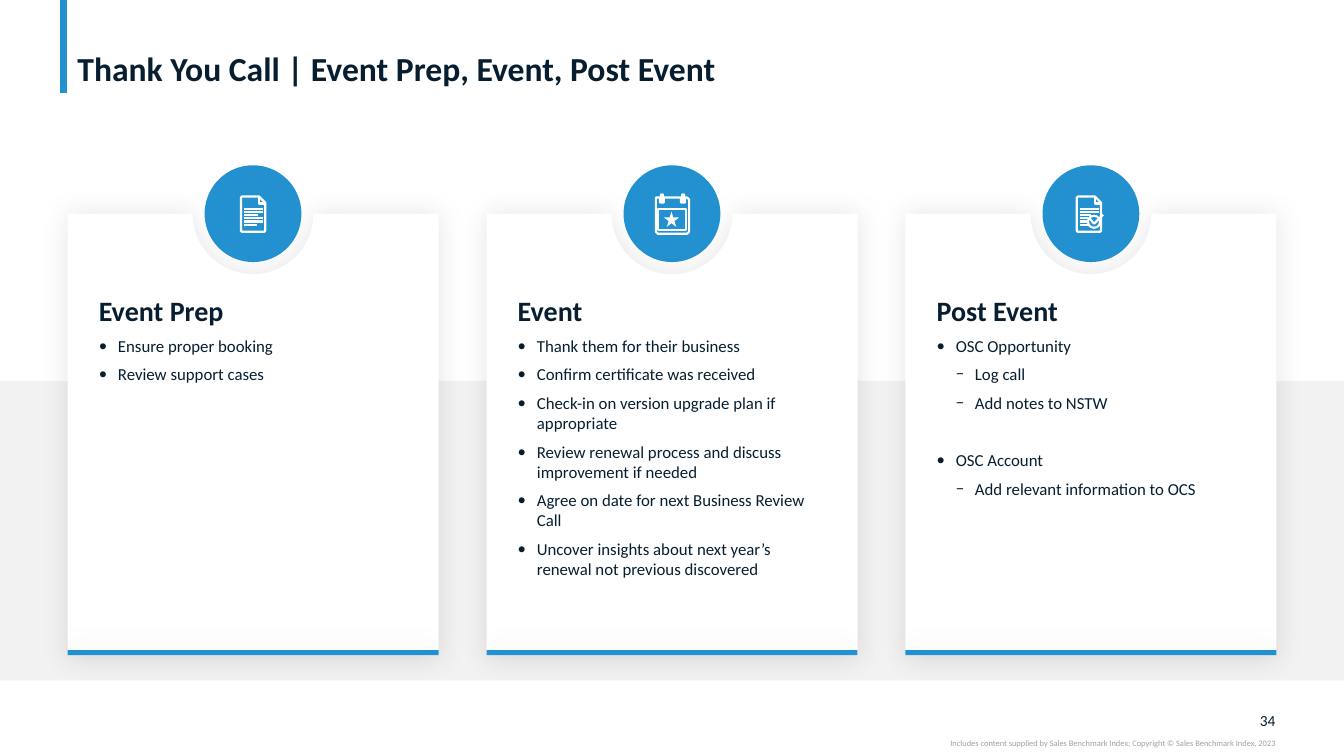
from math import cos, pi, sin

from lxml.etree import SubElement
from pptx import Presentation
from pptx.dml.color import RGBColor
from pptx.enum.shapes import MSO_CONNECTOR as CONNECTOR, MSO_SHAPE as SHAPE
from pptx.enum.text import MSO_ANCHOR as ANCHOR, PP_ALIGN as ALIGN
from pptx.oxml.ns import qn
from pptx.util import Inches, Pt

BLUE, NAVY, WHITE, GRAY, PALE = "2391CF", "071E31", "FFFFFF", "A0A0A0", "F2F2F2"
CARD_LEFT, CARD_TOP, CARD_WIDTH, CARD_HEIGHT = 0.67, 2.12, 3.68, 4.38
CARD_STEP = (8.98 - CARD_LEFT) / 2
NOTCH_RADIUS, DISC_RADIUS = 0.6, 0.48
INDENT = 0.19


def color(value):
    return RGBColor.from_string(value)


def style(shape, fill=None, line=None, weight=1.5, shadow=False):
    shape.shadow.inherit = False
    if fill:
        shape.fill.solid()
        shape.fill.fore_color.rgb = color(fill)
    else:
        shape.fill.background()
    if line:
        shape.line.color.rgb = color(line)
        shape.line.width = Pt(weight)
    else:
        shape.line.fill.background()
    if shadow:
        effects = shape._element.spPr.find(qn("a:effectLst"))
        outer = SubElement(effects, qn("a:outerShdw"), blurRad=str(Pt(20)), algn="ctr", rotWithShape="0")
        black = SubElement(outer, qn("a:srgbClr"), val="000000")
        SubElement(black, qn("a:alpha"), val="10000")
    return shape


def add_preset(shapes, kind, left, top, width, height, **formats):
    shape = shapes.add_shape(kind, Inches(left), Inches(top), Inches(width), Inches(height))
    return style(shape, **formats)


def add_outline(shapes, points, closed=True, **formats):
    start, *rest = [(Inches(x), Inches(y)) for x, y in points]
    builder = shapes.build_freeform(*start)
    builder.add_line_segments(rest, close=closed)
    return style(builder.convert_to_shape(), **formats)


def add_line(shapes, start, end, line, weight):
    connector = shapes.add_connector(CONNECTOR.STRAIGHT, *[Inches(value) for value in (*start, *end)])
    connector.line.color.rgb = color(line)
    connector.line.width = Pt(weight)
    SubElement(connector._element.spPr, qn("a:effectLst"))


def write(paragraph, text, size=12, fill=NAVY, bold=False, align=ALIGN.LEFT,
          before=None, after=None, spacing=None, bullet=None, level=0):
    paragraph.alignment = align
    if before:
        paragraph.space_before = Pt(before)
    if after:
        paragraph.space_after = Pt(after)
    if spacing:
        paragraph.line_spacing = spacing
    if bullet:
        paragraph.level = level
        properties = paragraph._p.get_or_add_pPr()
        properties.set("marL", str(Inches(INDENT * (level + 1))))
        properties.set("indent", str(Inches(-INDENT)))
        SubElement(properties, qn("a:buFont"), typeface="Calibri")
        SubElement(properties, qn("a:buChar"), char=bullet)
    run = paragraph.add_run()
    run.text = text
    run.font.name = "Calibri"
    run.font.size = Pt(size)
    run.font.bold = bold
    run.font.color.rgb = color(fill)


def set_frame(frame, anchor, left, top, right, bottom):
    frame.word_wrap = True
    frame.vertical_anchor = anchor
    frame.margin_left, frame.margin_top = Inches(left), Inches(top)
    frame.margin_right, frame.margin_bottom = Inches(right), Inches(bottom)
    return frame.paragraphs[0]


def add_label(slide, box, text, anchor=ANCHOR.TOP, side=0, **formats):
    label = slide.shapes.add_textbox(*[Inches(value) for value in box])
    write(set_frame(label.text_frame, anchor, side, 0, side, 0), text, **formats)


def draw_page(shapes, x, y, rows):
    pen = {"line": WHITE, "weight": 1.6}
    add_outline(shapes, [(x + 0.06, y - 0.17), (x + 0.06, y - 0.1), (x + 0.125, y - 0.1)], closed=False, **pen)
    sheet = [(0.06, -0.17), (-0.11, -0.17), (-0.12, -0.16), (-0.12, 0.17), (-0.11, 0.18),
             (0.11, 0.18), (0.12, 0.17), (0.12, -0.11)]
    add_outline(shapes, [(x + dx, y + dy) for dx, dy in sheet], **pen)
    for index, length in enumerate(rows):
        row = y - 0.05 + 0.16 / 5 * index
        add_line(shapes, (x - 0.09, row), (x - 0.09 + length, row), **pen)


def draw_prep_icon(shapes, x, y):
    draw_page(shapes, x, y, [0.19, 0.19, 0.14, 0.19, 0.19, 0.13])


def draw_event_icon(shapes, x, y):
    pen = {"line": WHITE, "weight": 1.5}
    for dx in (-0.11, 0.1):
        add_preset(shapes, SHAPE.ROUNDED_RECTANGLE, x + dx, y - 0.19, 0.02, 0.07, **pen)
    body = [(-0.16, -0.16), (-0.12, -0.16), (-0.12, -0.11), (-0.08, -0.11), (-0.08, -0.16),
            (0.09, -0.16), (0.09, -0.11), (0.13, -0.11), (0.13, -0.16), (0.15, -0.16),
            (0.17, -0.14), (0.17, 0.18), (0.15, 0.2), (-0.14, 0.2), (-0.16, 0.18), (-0.16, -0.14)]
    add_outline(shapes, [(x + dx, y + dy) for dx, dy in body], **pen)
    add_preset(shapes, SHAPE.RECTANGLE, x - 0.14, y - 0.05, 0.28, 0.21, **pen)
    add_preset(shapes, SHAPE.STAR_5_POINT, x - 0.08, y - 0.02, 0.15, 0.15, fill=WHITE)


def draw_post_icon(shapes, x, y):
    draw_page(shapes, x - 0.02, y, [0.19, 0.19, 0.11, 0.08, 0.07, 0.08])
    add_preset(shapes, SHAPE.OVAL, x - 0.03, y + 0.02, 0.12, 0.12, line=WHITE, weight=1.5)
    for dx, dy in ((-0.01, 0.05), (0.12, 0.01)):
        add_line(shapes, (x + dx, y + dy), (x + 0.03, y + 0.1), WHITE, 1.6)


def add_card(slide, left, top, width, height, heading, items, draw_icon):
    center, right, bottom = left + width / 2, left + width, top + height
    angles = [pi - pi * step / 48 for step in range(49)]
    notch = [(center + NOTCH_RADIUS * cos(angle), top + NOTCH_RADIUS * sin(angle)) for angle in angles]
    corners = [(right, top), (right, bottom), (left, bottom)]
    card = add_outline(slide.shapes, [(left, top), *notch, *corners], fill=WHITE, shadow=True)
    frame = card.text_frame
    write(set_frame(frame, ANCHOR.TOP, 0.31, 0.79, 0.31, 0.05), heading, size=20, bold=True, after=6)
    for text, level, before in items:
        write(frame.add_paragraph(), text, before=before, after=6, bullet="•−"[level], level=level)
    add_preset(slide.shapes, SHAPE.RECTANGLE, left, bottom - 0.05, width, 0.05, fill=BLUE, shadow=True)
    icon = slide.shapes.add_group_shape().shapes
    add_preset(icon, SHAPE.OVAL, center - DISC_RADIUS, top - DISC_RADIUS,
               2 * DISC_RADIUS, 2 * DISC_RADIUS, fill=BLUE)
    draw_icon(icon, center, top)


def add_header(slide, left, top, width, height):
    add_line(slide.shapes, (left - 0.04, 0), (left - 0.04, 0.92), BLUE, 5)
    add_label(slide, (left, top, width, height), "Thank You Call | Event Prep, Event, Post Event",
              anchor=ANCHOR.BOTTOM, side=0.1, size=24, bold=True, spacing=0.9)


def add_footer(slide, right, top):
    add_label(slide, (right - 0.33, top, 0.33, 0.19), "34", anchor=ANCHOR.MIDDLE, size=11, align=ALIGN.RIGHT)
    add_label(slide, (right - 5.16, top + 0.27, 5.16, 0.1),
              "Includes content supplied by Sales Benchmark Index; Copyright © Sales Benchmark Index, 2023",
              size=6, fill=GRAY, align=ALIGN.RIGHT)


CARDS = [
    ("Event Prep", [("Ensure proper booking", 0, 0), ("Review support cases", 0, 0)], draw_prep_icon),
    ("Event", [
        ("Thank them for their business", 0, 0),
        ("Confirm certificate was received", 0, 0),
        ("Check-in on version upgrade plan if appropriate", 0, 0),
        ("Review renewal process and discuss improvement if needed", 0, 0),
        ("Agree on date for next Business Review Call", 0, 0),
        ("Uncover insights about next year’s renewal not previous discovered", 0, 0),
    ], draw_event_icon),
    ("Post Event", [
        ("OSC Opportunity", 0, 0),
        ("Log call", 1, 0),
        ("Add notes to NSTW", 1, 0),
        ("OSC Account", 0, 20.5),
        ("Add relevant information to OCS", 1, 0),
    ], draw_post_icon),
]


def main():
    presentation = Presentation()
    presentation.slide_width, presentation.slide_height = Inches(13.33), Inches(7.5)
    slide = presentation.slides.add_slide(presentation.slide_layouts[6])
    add_preset(slide.shapes, SHAPE.RECTANGLE, 0, 3.78, 13.33, 2.97, fill=PALE)
    add_header(slide, CARD_LEFT, 0.04, 11.99, 0.84)
    for index, card in enumerate(CARDS):
        add_card(slide, CARD_LEFT + CARD_STEP * index, CARD_TOP, CARD_WIDTH, CARD_HEIGHT, *card)
    add_footer(slide, 12.65, 7.05)
    presentation.save("out.pptx")


if __name__ == "__main__":
    main()
